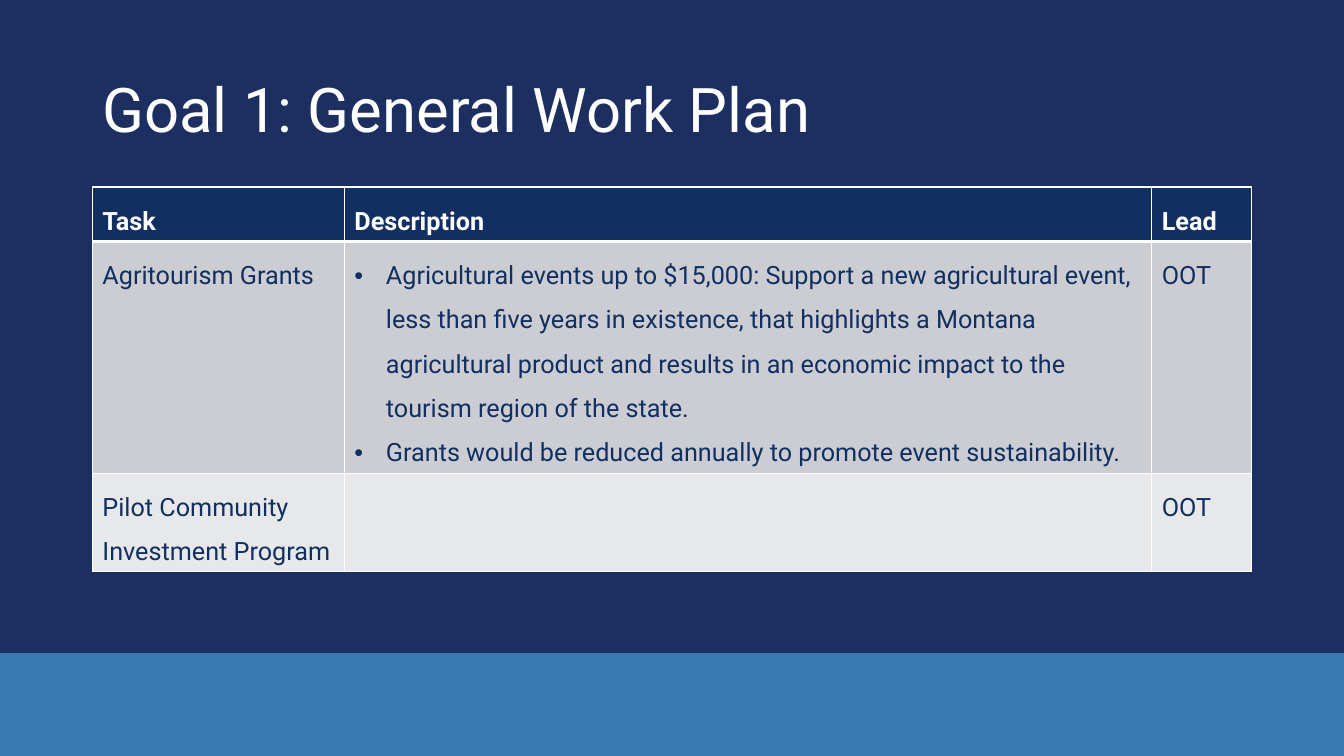
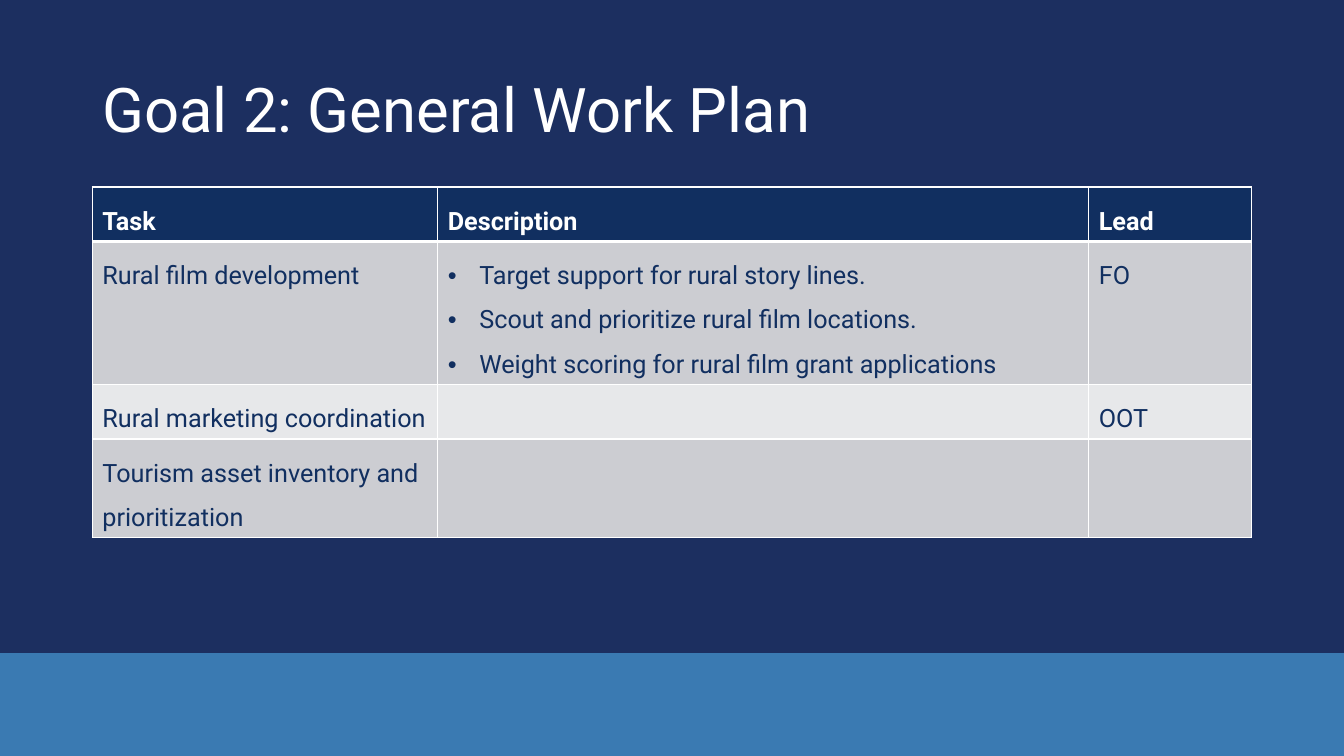
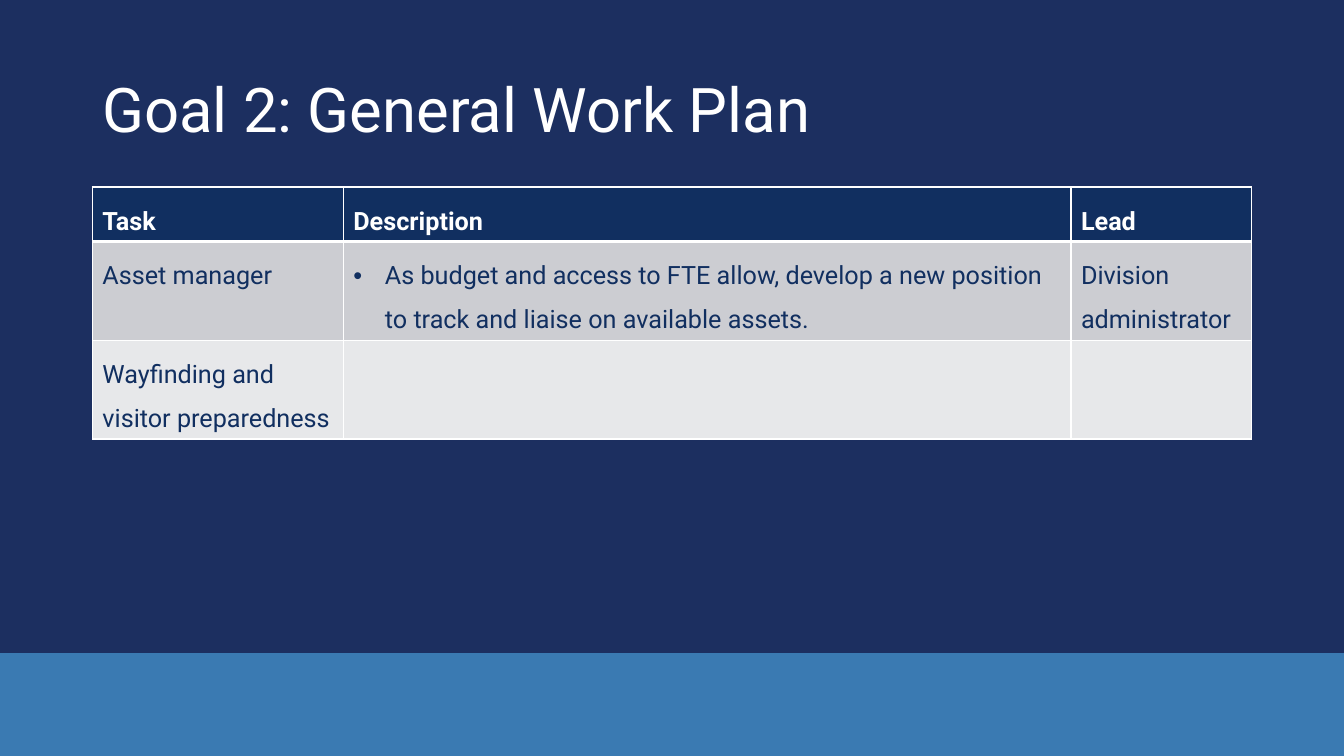
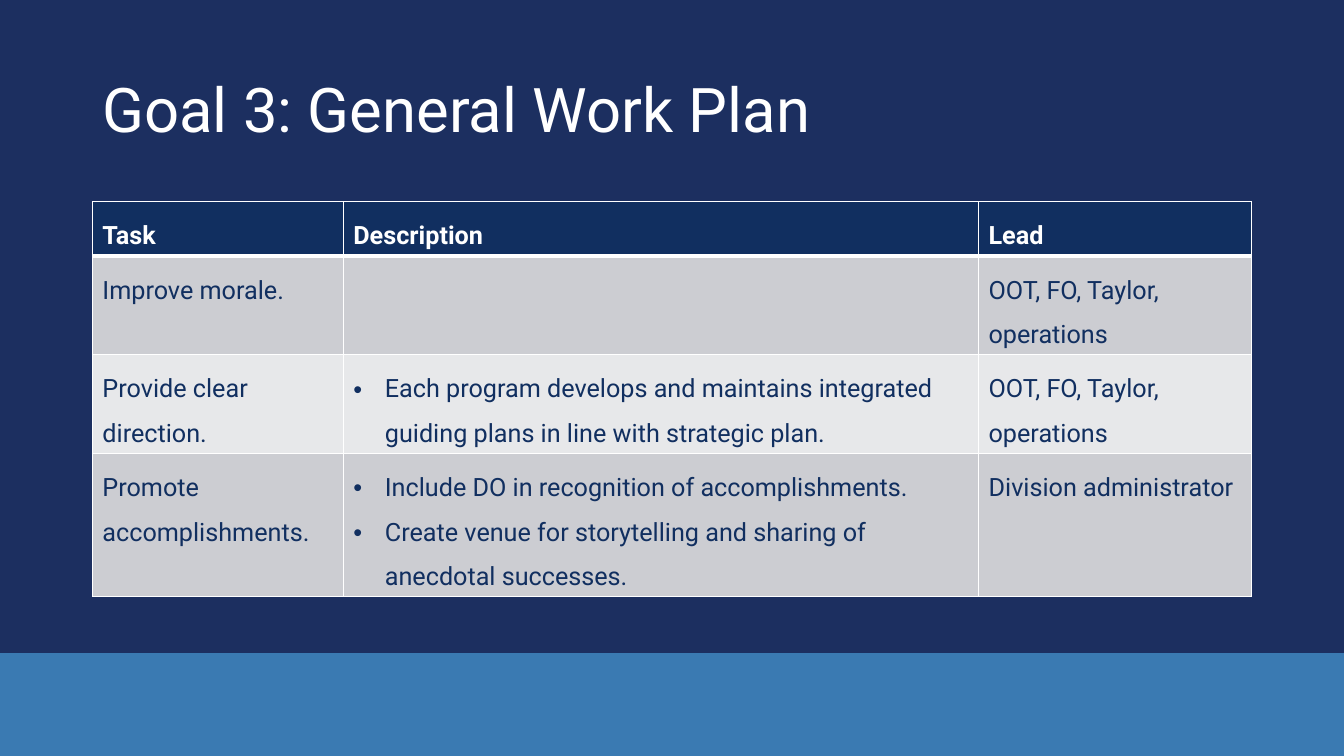
import pptx
import pptx.util
import pptx.dml.color
import pptx.enum.shapes
import pptx.enum.text
import pptx.oxml
import pptx.oxml.ns

RGBColor = pptx.dml.color.RGBColor
NAVY = RGBColor(0x1C, 0x2F, 0x60)
BAND_BLUE = RGBColor(0x3A, 0x7A, 0xB2)
INK = RGBColor(0x11, 0x2F, 0x60)
ROW_SHADES = [RGBColor(0xCC, 0xCD, 0xD2), RGBColor(0xE7, 0xE8, 0xEA)]
WHITE = RGBColor(0xFF, 0xFF, 0xFF)

PX = 9525
SLIDE_WIDTH, SLIDE_HEIGHT = 1280, 720
BAND_BOX = (0, 622, 1280, 98)
TITLE_BOX = (88, 38, 1104, 139)
LINE_HEIGHT, ROW_PADDING = 42, 9
BULLET_INDENT = 30

TITLE_FONT = {"name": "Roboto", "size": pptx.util.Pt(44), "bold": False}
HEADER_FONT = {"name": "Roboto", "size": pptx.util.Pt(18), "bold": True}
BODY_FONT = {"name": "Roboto", "size": pptx.util.Pt(18), "bold": False}
HEADINGS = ("Task", "Description", "Lead")

PLANS = [
    {
        "title": "Goal 1: General Work Plan",
        "top": 178,
        "columns": (240, 769, 95),
        "tasks": [
            (5, "Agritourism Grants", [
                "Agricultural events up to $15,000: Support a new agricultural event, "
                "less than five years in existence, that highlights a Montana "
                "agricultural product and results in an economic impact to the "
                "tourism region of the state.",
                "Grants would be reduced annually to promote event sustainability.",
            ], "OOT"),
            (2, "Pilot Community Investment Program", [], "OOT"),
        ],
    },
    {
        "title": "Goal 2: General Work Plan",
        "top": 178,
        "columns": (329, 620, 155),
        "tasks": [
            (3, "Rural film development", [
                "Target support for rural story lines.",
                "Scout and prioritize rural film locations.",
                "Weight scoring for rural film grant applications",
            ], "FO"),
            (1, "Rural marketing coordination", [], "OOT"),
            (2, "Tourism asset inventory and prioritization", [], ""),
        ],
    },
    {
        "title": "Goal 2: General Work Plan",
        "top": 178,
        "columns": (239, 693, 172),
        "tasks": [
            (2, "Asset manager", [
                "As budget and access to FTE allow, develop a new position "
                "to track and liaise on available assets.",
            ], "Division administrator"),
            (2, "Wayfinding and visitor preparedness", [], ""),
        ],
    },
    {
        "title": "Goal 3: General Work Plan",
        "top": 192,
        "columns": (239, 605, 260),
        "tasks": [
            (2, "Improve morale.", [], "OOT, FO, Taylor, operations"),
            (2, "Provide clear direction.", [
                "Each program develops and maintains integrated guiding plans "
                "in line with strategic plan.",
            ], "OOT, FO, Taylor, operations"),
            (3, "Promote accomplishments.", [
                "Include DO in recognition of accomplishments.",
                "Create venue for storytelling and sharing of anecdotal successes.",
            ], "Division administrator"),
        ],
    },
]


def to_emu(box):
    return [length * PX for length in box]


def xml_element(markup):
    return pptx.oxml.parse_xml(
        markup.replace(" ", f" {pptx.oxml.ns.nsdecls('a')} ", 1))


def write_run(paragraph, text, font_format, color, line_spacing):
    paragraph.line_spacing = line_spacing
    run = paragraph.add_run()
    run.text = text
    for attribute, value in font_format.items():
        setattr(run.font, attribute, value)
    run.font.color.rgb = color


def add_bullet(paragraph):
    properties = paragraph._p.get_or_add_pPr()
    properties.set("marL", str(BULLET_INDENT * PX))
    properties.set("indent", str(-BULLET_INDENT * PX))
    properties.append(xml_element('<a:buFont typeface="Arial"/>'))
    properties.append(xml_element('<a:buChar char="•"/>'))


def set_borders(cell, row_index):
    widths = {
        "lnL": 1,
        "lnR": 1,
        "lnT": 3 if row_index == 1 else 1,
        "lnB": 3 if row_index == 0 else 1,
    }
    properties = cell._tc.get_or_add_tcPr()
    for position, (side, width) in enumerate(widths.items()):
        properties.insert(position, xml_element(
            f'<a:{side} w="{pptx.util.Pt(width)}"><a:solidFill>'
            f'<a:srgbClr val="{WHITE}"/></a:solidFill></a:{side}>'))


def fill_cell(cell, row_index, texts, bulleted):
    is_header = row_index == 0
    cell.fill.solid()
    cell.fill.fore_color.rgb = INK if is_header else ROW_SHADES[(row_index - 1) % 2]
    set_borders(cell, row_index)
    for index, text in enumerate(texts):
        frame = cell.text_frame
        paragraph = frame.add_paragraph() if index else frame.paragraphs[0]
        if bulleted:
            add_bullet(paragraph)
        write_run(paragraph, text, HEADER_FONT if is_header else BODY_FONT,
                  WHITE if is_header else INK, 1.5)


def add_work_table(slide, left, top, columns, tasks):
    rows = [(1, HEADINGS[0], [HEADINGS[1]], HEADINGS[2])] + tasks
    heights = [ROW_PADDING + LINE_HEIGHT * row[0] for row in rows]
    table = slide.shapes.add_table(
        len(rows), len(columns),
        *to_emu((left, top, sum(columns), sum(heights)))).table
    for column, width in zip(table.columns, columns):
        column.width = width * PX
    for row_index, (_, task, description, lead) in enumerate(rows):
        table.rows[row_index].height = heights[row_index] * PX
        for column_index, texts in enumerate(([task], description, [lead])):
            fill_cell(table.cell(row_index, column_index), row_index,
                      [text for text in texts if text],
                      bulleted=row_index > 0 and column_index == 1)


def set_title(slide, text, box):
    title = slide.shapes.title
    title.left, title.top, title.width, title.height = to_emu(box)
    title.text_frame.vertical_anchor = pptx.enum.text.MSO_ANCHOR.MIDDLE
    paragraph = title.text_frame.paragraphs[0]
    paragraph.alignment = pptx.enum.text.PP_ALIGN.LEFT
    write_run(paragraph, text, TITLE_FONT, WHITE, 0.9)


def style_master(master, slide):
    master.background.fill.solid()
    master.background.fill.fore_color.rgb = NAVY
    band = slide.shapes.add_shape(
        pptx.enum.shapes.MSO_SHAPE.RECTANGLE, *to_emu(BAND_BOX))
    band.shadow.inherit = False
    band.fill.solid()
    band.fill.fore_color.rgb = BAND_BLUE
    band.line.fill.background()
    master.shapes.element.insert(2, band.element)


def add_plan_slide(deck, plan):
    slide = deck.slides.add_slide(
        deck.slide_layouts.get_by_name("Title Only"))
    set_title(slide, plan["title"], TITLE_BOX)
    add_work_table(slide, TITLE_BOX[0], plan["top"], plan["columns"], plan["tasks"])
    return slide


def main():
    deck = pptx.Presentation()
    deck.slide_width, deck.slide_height = to_emu((SLIDE_WIDTH, SLIDE_HEIGHT))
    plan_slides = [add_plan_slide(deck, plan) for plan in PLANS]
    style_master(deck.slide_master, plan_slides[0])
    deck.save("out.pptx")


if __name__ == "__main__":
    main()
